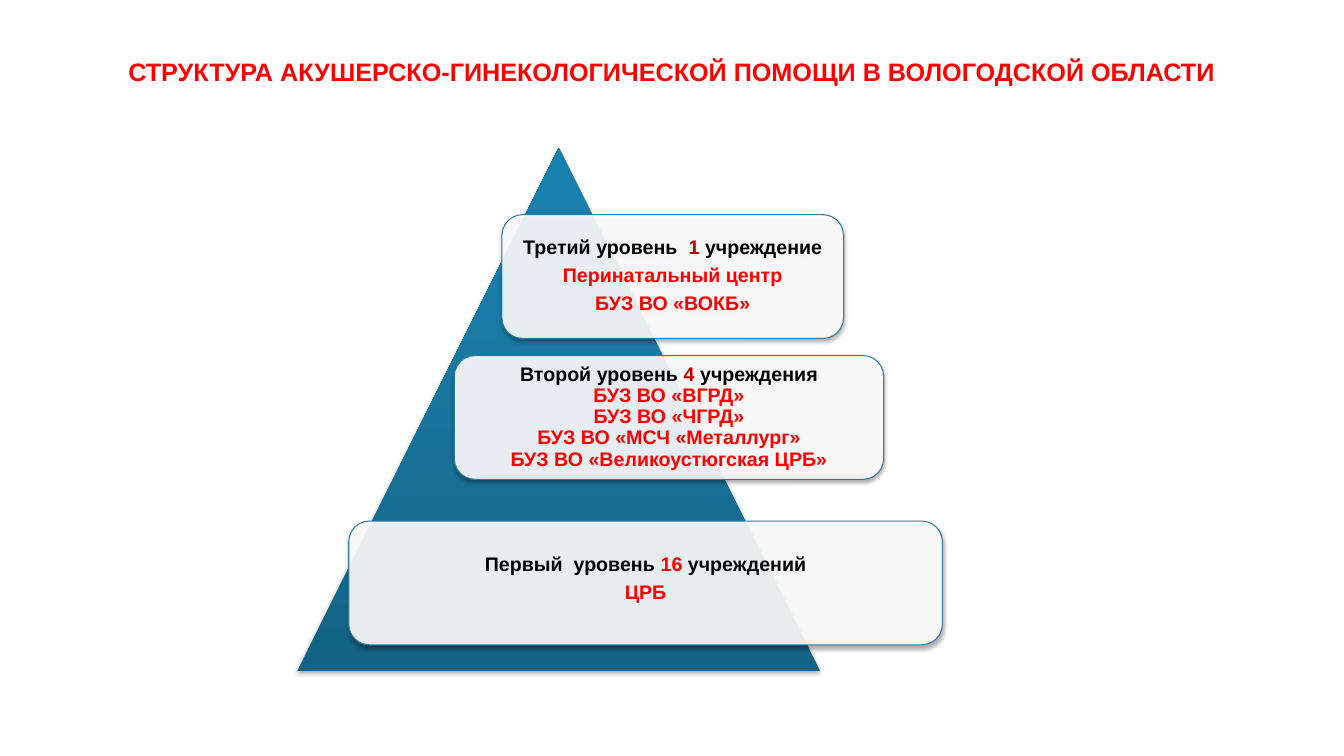
from copy import deepcopy

from lxml.etree import SubElement
from pptx import Presentation
from pptx.dml.color import RGBColor
from pptx.enum.shapes import MSO_SHAPE as Preset
from pptx.enum.text import MSO_ANCHOR as Anchor, MSO_AUTO_SIZE as AutoSize, PP_ALIGN as Align
from pptx.oxml.ns import qn
from pptx.util import Cm, Pt

BLACK, RED, DARK_RED = "000000", "FF0000", "C00000"
GRADIENT = [(0, "146284"), (0.8, "1A7FAB"), (1, "1780AE")]
CARD_HEIGHT = 3.12
LEVELS = [
    (5.16, 1.68, 8.61, 0.15, [
        [("Третий уровень  ", BLACK), ("1 ", DARK_RED), ("учреждение", BLACK)],
        [("Перинатальный центр", RED)],
        [("БУЗ ВО «ВОКБ»", RED)],
    ]),
    (3.96, 5.23, 10.82, 0.15, [
        [("Второй уровень ", BLACK), ("4 ", DARK_RED), ("учреждения\v", BLACK),
         ("БУЗ ВО «ВГРД»\vБУЗ ВО «ЧГРД»\vБУЗ ВО «МСЧ «Металлург»\v"
          "БУЗ ВО «Великоустюгская ЦРБ»", RED)],
    ]),
    (1.3, 9.4, 14.96, 0.35, [
        [("Первый  уровень", BLACK), (" 16 ", RED), ("учреждений", BLACK)],
        [("ЦРБ", RED)],
    ]),
]


def color(value):
    """Turn a hex string into a colour."""
    return RGBColor.from_string(value)


def set_font(font, size):
    """Apply the bold Arial used throughout the slide."""
    font.name, font.size, font.bold = "Arial", Pt(size), True


def add_soft_shadow(shape):
    """Give the shape a soft shadow that falls straight down."""
    shape.shadow.inherit = False
    effects = shape._element.spPr.find(qn("a:effectLst"))
    shadow = SubElement(effects, qn("a:outerShdw"), blurRad=str(Pt(3.1)),
                        dist=str(Pt(1.8)), dir="5400000", rotWithShape="0")
    black = SubElement(shadow, qn("a:srgbClr"), val=BLACK)
    SubElement(black, qn("a:alpha"), val="35000")


def add_title(slide, left, top, width, height):
    """Place the slide heading in the title placeholder."""
    title = slide.shapes.title
    title.left, title.top, title.width, title.height = map(Cm, (left, top, width, height))
    frame = title.text_frame
    frame.auto_size, frame.vertical_anchor = AutoSize.NONE, Anchor.MIDDLE
    frame.margin_left = frame.margin_right = frame.margin_top = 0
    frame.margin_bottom = Cm(0.71)
    frame.text = "СТРУКТУРА АКУШЕРСКО-ГИНЕКОЛОГИЧЕСКОЙ ПОМОЩИ В ВОЛОГОДСКОЙ ОБЛАСТИ"
    paragraph = frame.paragraphs[0]
    paragraph.alignment = Align.CENTER
    set_font(paragraph.font, 18)
    paragraph.font.color.rgb = color(RED)


def add_triangle(slide, left, top, size):
    """Draw the triangle with its vertical gradient."""
    triangle = slide.shapes.add_shape(Preset.ISOSCELES_TRIANGLE, *map(Cm, (left, top, size, size)))
    triangle.line.fill.background()
    triangle.fill.gradient()
    triangle.fill.gradient_angle = 90
    stop_list = triangle._element.spPr.find(qn("a:gradFill")).find(qn("a:gsLst"))
    stop_list.append(deepcopy(stop_list[-1]))
    for stop, (position, value) in zip(triangle.fill.gradient_stops, GRADIENT):
        stop.position, stop.color.rgb = position, color(value)
    add_soft_shadow(triangle)


def add_card(slide, left, top, width, bottom_margin, lines):
    """Draw one translucent level card with its text."""
    card = slide.shapes.add_shape(Preset.ROUNDED_RECTANGLE,
                                  *map(Cm, (left, top, width, CARD_HEIGHT)))
    card.fill.solid()
    card.fill.fore_color.rgb = color("FFFFFF")
    fill = card._element.spPr.find(qn("a:solidFill"))
    SubElement(fill[0], qn("a:alpha"), val="90000")
    card.line.color.rgb, card.line.width = color("2C7C9F"), Pt(0.75)
    add_soft_shadow(card)
    frame = card.text_frame
    frame.word_wrap, frame.vertical_anchor = True, Anchor.MIDDLE
    frame.margin_left = frame.margin_right = frame.margin_top = Cm(0.15)
    frame.margin_bottom = Cm(bottom_margin)
    for index, parts in enumerate(lines):
        paragraph = frame.add_paragraph() if index else frame.paragraphs[0]
        paragraph.alignment, paragraph.line_spacing = Align.CENTER, 0.9
        paragraph.space_after = Pt(4.9)
        set_font(paragraph.font, 14)
        for text, value in parts:
            for piece_index, piece in enumerate(text.split("\v")):
                if piece_index:
                    paragraph.add_line_break()
                if piece:
                    run = paragraph.add_run()
                    run.text, run.font.color.rgb = piece, color(value)


def add_pyramid(slide, left, top, size):
    """Build the pyramid and its level cards from the given corner."""
    add_triangle(slide, left, top, size)
    for offset_x, offset_y, width, bottom_margin, lines in LEVELS:
        add_card(slide, left + offset_x, top + offset_y, width, bottom_margin, lines)


def main():
    """Create the presentation and save it."""
    presentation = Presentation()
    presentation.slide_width, presentation.slide_height = Cm(33.87), Cm(19.05)
    slide = presentation.slides.add_slide(presentation.slide_layouts[5])
    add_title(slide, 2.03, 0.3, 29.8, 3.71)
    add_pyramid(slide, 7.49, 3.73, 13.18)
    presentation.save("out.pptx")


if __name__ == "__main__":
    main()
